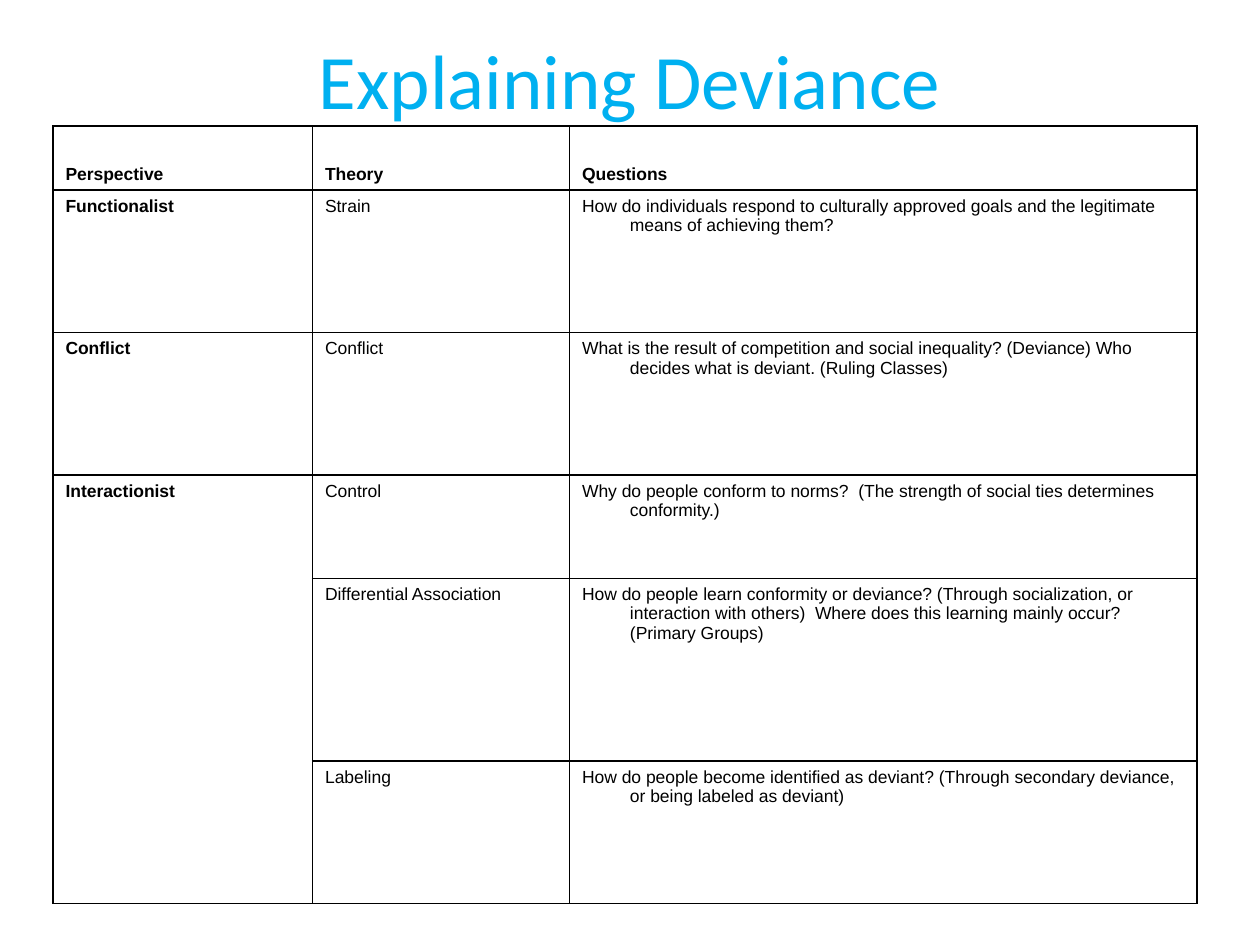
import pptx
import pptx.dml.color
import pptx.enum.text
import pptx.oxml.ns
import pptx.util
from lxml import etree

Inches = pptx.util.Inches
Pt = pptx.util.Pt
RGBColor = pptx.dml.color.RGBColor
Anchor = pptx.enum.text.MSO_ANCHOR

SKY_BLUE = RGBColor(0x00, 0xB0, 0xF0)
BLACK = RGBColor(0x00, 0x00, 0x00)

TITLE = "Explaining Deviance"
ROWS = [
    ("Perspective", "Theory", "Questions"),
    ("Functionalist", "Strain",
     "How do individuals respond to culturally approved goals and the legitimate "
     "means of achieving them?"),
    ("Conflict", "Conflict",
     "What is the result of competition and social inequality? (Deviance) Who "
     "decides what is deviant. (Ruling Classes)"),
    ("Interactionist", "Control",
     "Why do people conform to norms?  (The strength of social ties determines "
     "conformity.)"),
    ("", "Differential Association",
     "How do people learn conformity or deviance? (Through socialization, or "
     "interaction with others)  Where does this learning mainly occur?  "
     "(Primary Groups)"),
    ("", "Labeling",
     "How do people become identified as deviant? (Through secondary deviance, "
     "or being labeled as deviant)"),
]
COLUMN_WIDTHS = [2.06, 2.04, 4.98]
ROW_HEIGHTS = [0.51, 1.13, 1.13, 0.82, 1.45, 1.13]
INTERACTIONIST_ROWS = (3, 5)


def style_span(span, font_name, size, color, bold=False):
    span.font.name = font_name
    span.font.size = Pt(size)
    span.font.bold = bold
    span.font.color.rgb = color


def add_borders(cell):
    qn = pptx.oxml.ns.qn
    properties = cell._tc.get_or_add_tcPr()
    for side in ("lnL", "lnR", "lnT", "lnB"):
        line = etree.SubElement(properties, qn(f"a:{side}"), w=str(Pt(1)))
        fill = etree.SubElement(line, qn("a:solidFill"))
        etree.SubElement(fill, qn("a:srgbClr"), val=str(BLACK))


def fill_cell(cell, text, bold, anchor):
    add_borders(cell)
    cell.fill.background()
    cell.vertical_anchor = anchor
    cell.text_frame.text = text
    para = cell.text_frame.paragraphs[0]
    indent = para._p.get_or_add_pPr()
    indent.set("marL", str(Inches(0.38)))
    indent.set("indent", str(-Inches(0.38)))
    for span in para.runs:
        style_span(span, "Arial", 10, BLACK, bold)


def add_title(page):
    box = page.shapes.title
    box.left, box.top, box.width, box.height = map(Inches, (0.5, 0, 9, 1.25))
    box.text_frame.text = TITLE
    box.text_frame.vertical_anchor = Anchor.MIDDLE
    para = box.text_frame.paragraphs[0]
    para.alignment = pptx.enum.text.PP_ALIGN.CENTER
    style_span(para.runs[0], "Calibri", 44, SKY_BLUE)


def add_theory_table(page):
    frame = page.shapes.add_table(
        len(ROWS), len(COLUMN_WIDTHS), Inches(0.42), Inches(1),
        Inches(sum(COLUMN_WIDTHS)), Inches(sum(ROW_HEIGHTS)))
    table = frame.table
    table.first_row = table.horz_banding = False
    for column, width in zip(table.columns, COLUMN_WIDTHS):
        column.width = Inches(width)
    for row, height in zip(table.rows, ROW_HEIGHTS):
        row.height = Inches(height)
    for r, texts in enumerate(ROWS):
        anchor = Anchor.BOTTOM if r == 0 else Anchor.TOP
        for c, text in enumerate(texts):
            fill_cell(table.cell(r, c), text, r == 0 or c == 0, anchor)
    first, last = INTERACTIONIST_ROWS
    table.cell(first, 0).merge(table.cell(last, 0))


def main():
    deck = pptx.Presentation()
    deck.slide_width, deck.slide_height = Inches(10), Inches(7.5)
    page = deck.slides.add_slide(deck.slide_layouts.get_by_name("Title Only"))
    add_title(page)
    add_theory_table(page)
    deck.save("out.pptx")


if __name__ == "__main__":
    main()
